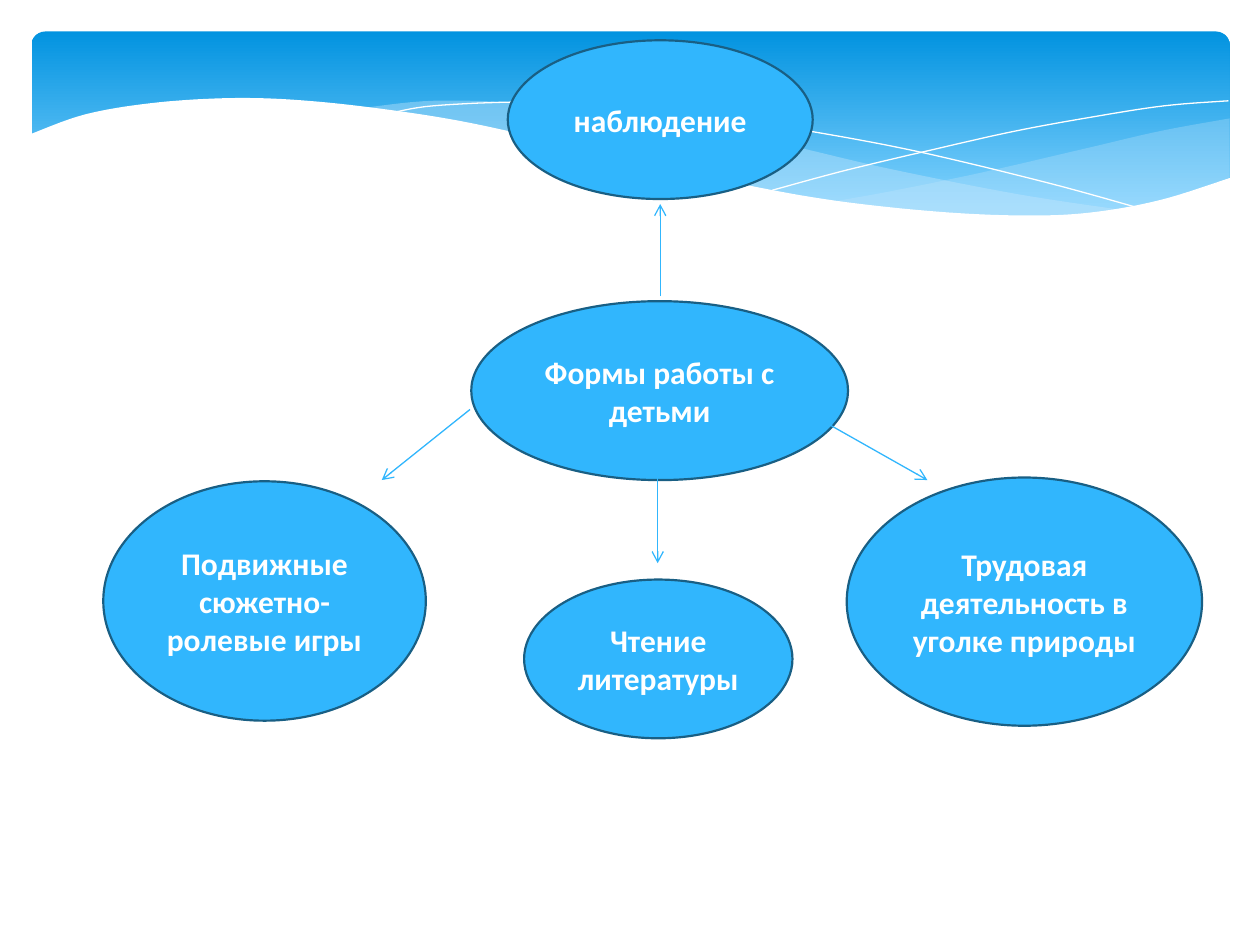
"""Build a slide of forms of work with children, under a wave banner."""
import dataclasses
import typing

import lxml.etree
import pptx
import pptx.dml.color
import pptx.enum.shapes
import pptx.enum.text
import pptx.oxml.ns
import pptx.util

Inches = pptx.util.Inches
Pt = pptx.util.Pt
qn = pptx.oxml.ns.qn
Shape = pptx.enum.shapes.MSO_SHAPE
Point = tuple[float, float]

FONT = "Calibri"
STEPS = 8
COLORS = {
    "white": "FFFFFF",
    "blue": "31B6FD",
    "edge": "195F84",
    "mist": "C6E7FC",
    "top": "0293E0",
    "base": "83D3FE",
}


@dataclasses.dataclass(frozen=True)
class Wave:
    curves: tuple[tuple[Point, ...], ...]
    fill: typing.Optional[str] = None
    alpha: int = 100


@dataclasses.dataclass(frozen=True)
class Oval:
    text: str
    left: float
    top: float
    width: float
    height: float


@dataclasses.dataclass(frozen=True)
class Arrow:
    start: Point
    end: Point


WAVES = (
    Wave((
        ((9.76, 0.94), (9.21, 1.04), (8.61, 1.18), (7.79, 1.37), (7.06, 1.52), (6.61, 1.6)),
        ((6.61, 1.6), (7.19, 1.67), (7.69, 1.71), (8.24, 1.72), (8.72, 1.69),
         (9.21, 1.6), (9.76, 1.41)),
    ), "mist", 29),
    Wave((
        ((8.93, 1.67), (8.07, 1.54), (7.06, 1.34), (6.29, 1.16), (5.55, 1.0),
         (4.89, 0.89), (4.2, 0.82), (3.44, 0.8), (2.86, 0.86)),
        ((2.86, 0.86), (3.62, 0.97), (4.49, 1.16), (5.3, 1.35), (6.01, 1.5),
         (6.8, 1.63), (7.48, 1.7), (8.18, 1.73), (8.93, 1.67)),
    ), "mist", 40),
    Wave((
        ((3.09, 0.9), (3.44, 0.84), (4.16, 0.81), (4.89, 0.84), (5.56, 0.91),
         (6.36, 1.03), (7.27, 1.2), (8.31, 1.45), (9.07, 1.66)),
    )),
    Wave((
        ((6.13, 1.51), (6.72, 1.35), (7.48, 1.17), (8.06, 1.04), (8.66, 0.93),
         (9.24, 0.84), (9.75, 0.8)),
    )),
    Wave((
        ((9.77, 1.41), (9.2, 1.59), (8.63, 1.69), (8.09, 1.71), (7.44, 1.68),
         (6.68, 1.6), (6.03, 1.49), (5.29, 1.33), (4.47, 1.14), (3.65, 0.96),
         (2.92, 0.85), (2.3, 0.79), (1.77, 0.78), (1.19, 0.82), (0.67, 0.91),
         (0.23, 1.07)),
        ((0.23, 2.24), (9.77, 2.24)),
    ), "white"),
)

OVALS = (
    Oval("Формы работы с детьми", 3.74, 2.39, 2.99, 1.42),
    Oval("Подвижные сюжетно-ролевые игры", 0.82, 3.82, 2.56, 1.9),
    Oval("наблюдение", 4.03, 0.32, 2.42, 1.26),
    Oval("Трудовая деятельность в уголке природы", 6.72, 3.79, 2.82, 1.97),
    Oval("Чтение литературы", 4.16, 4.6, 2.13, 1.26),
)

ARROWS = (
    Arrow((3.73, 3.25), (3.03, 3.81)),
    Arrow((5.24, 2.35), (5.24, 1.62)),
    Arrow((6.44, 3.29), (7.36, 3.81)),
    Arrow((5.22, 3.45), (5.22, 4.47)),
)


def tint(name: str) -> pptx.dml.color.RGBColor:
    return pptx.dml.color.RGBColor.from_string(COLORS[name])


def smooth(knots: tuple[Point, ...]) -> list[Point]:
    pts = (knots[0], *knots, knots[-1])
    out = [knots[0]]
    for a, b, c, d in zip(pts, pts[1:], pts[2:], pts[3:]):
        for step in range(1, STEPS + 1):
            t = step / STEPS
            out.append(tuple(
                0.5 * (2 * q + (r - p) * t + (2 * p - 5 * q + 4 * r - s) * t ** 2
                       + (3 * q - p - 3 * r + s) * t ** 3)
                for p, q, r, s in zip(a, b, c, d)
            ))
    return out


def draw_band(shapes: typing.Any) -> None:
    band = shapes.add_shape(
        Shape.ROUNDED_RECTANGLE, Inches(0.25), Inches(0.25), Inches(9.51), Inches(1.56))
    band.adjustments[0] = 0.07
    band.shadow.inherit = False
    band.line.fill.background()
    band.fill.gradient()
    band.fill.gradient_angle = 270
    for stop, name, place in zip(band.fill.gradient_stops, ("top", "base"), (0, 0.9)):
        stop.color.rgb = tint(name)
        stop.position = place


def draw_wave(shapes: typing.Any, wave: Wave) -> None:
    pts = [(Inches(x), Inches(y)) for curve in wave.curves for x, y in smooth(curve)]
    pen = shapes.build_freeform(*pts[0])
    pen.add_line_segments(pts[1:], close=wave.fill is not None)
    form = pen.convert_to_shape()
    form.shadow.inherit = False
    if wave.fill is None:
        form.fill.background()
        form.line.color.rgb = tint("white")
        form.line.width = Pt(0)
        return
    form.line.fill.background()
    form.fill.solid()
    form.fill.fore_color.rgb = tint(wave.fill)
    if wave.alpha < 100:
        color = form.element.spPr.find(qn("a:solidFill"))[0]
        lxml.etree.SubElement(color, qn("a:alpha"), val=str(wave.alpha * 1000))


def draw_oval(shapes: typing.Any, oval: Oval) -> None:
    form = shapes.add_shape(
        Shape.OVAL, Inches(oval.left), Inches(oval.top),
        Inches(oval.width), Inches(oval.height))
    form.shadow.inherit = False
    form.fill.solid()
    form.fill.fore_color.rgb = tint("blue")
    form.line.color.rgb = tint("edge")
    form.line.width = Pt(1.25)
    frame = form.text_frame
    frame.word_wrap = True
    frame.vertical_anchor = pptx.enum.text.MSO_ANCHOR.MIDDLE
    para = frame.paragraphs[0]
    para.alignment = pptx.enum.text.PP_ALIGN.CENTER
    run = para.add_run()
    run.text = oval.text
    run.font.name = FONT
    run.font.size = Pt(18)
    run.font.bold = True
    run.font.color.rgb = tint("white")


def draw_arrow(shapes: typing.Any, arrow: Arrow) -> None:
    ends = [Inches(v) for v in (*arrow.start, *arrow.end)]
    link = shapes.add_connector(pptx.enum.shapes.MSO_CONNECTOR.STRAIGHT, *ends)
    link.line.color.rgb = tint("blue")
    link.line.width = Pt(0.75)
    props = link.element.spPr
    lxml.etree.SubElement(props.find(qn("a:ln")), qn("a:tailEnd"), type="arrow")
    lxml.etree.SubElement(props, qn("a:effectLst"))


def main() -> None:
    deck = pptx.Presentation()
    deck.slide_width = Inches(10)
    deck.slide_height = Inches(7.5)
    shapes = deck.slides.add_slide(deck.slide_layouts[6]).shapes
    draw_band(shapes)
    for wave in WAVES:
        draw_wave(shapes, wave)
    for oval in OVALS:
        draw_oval(shapes, oval)
    for arrow in ARROWS:
        draw_arrow(shapes, arrow)
    deck.save("out.pptx")


if __name__ == "__main__":
    main()
